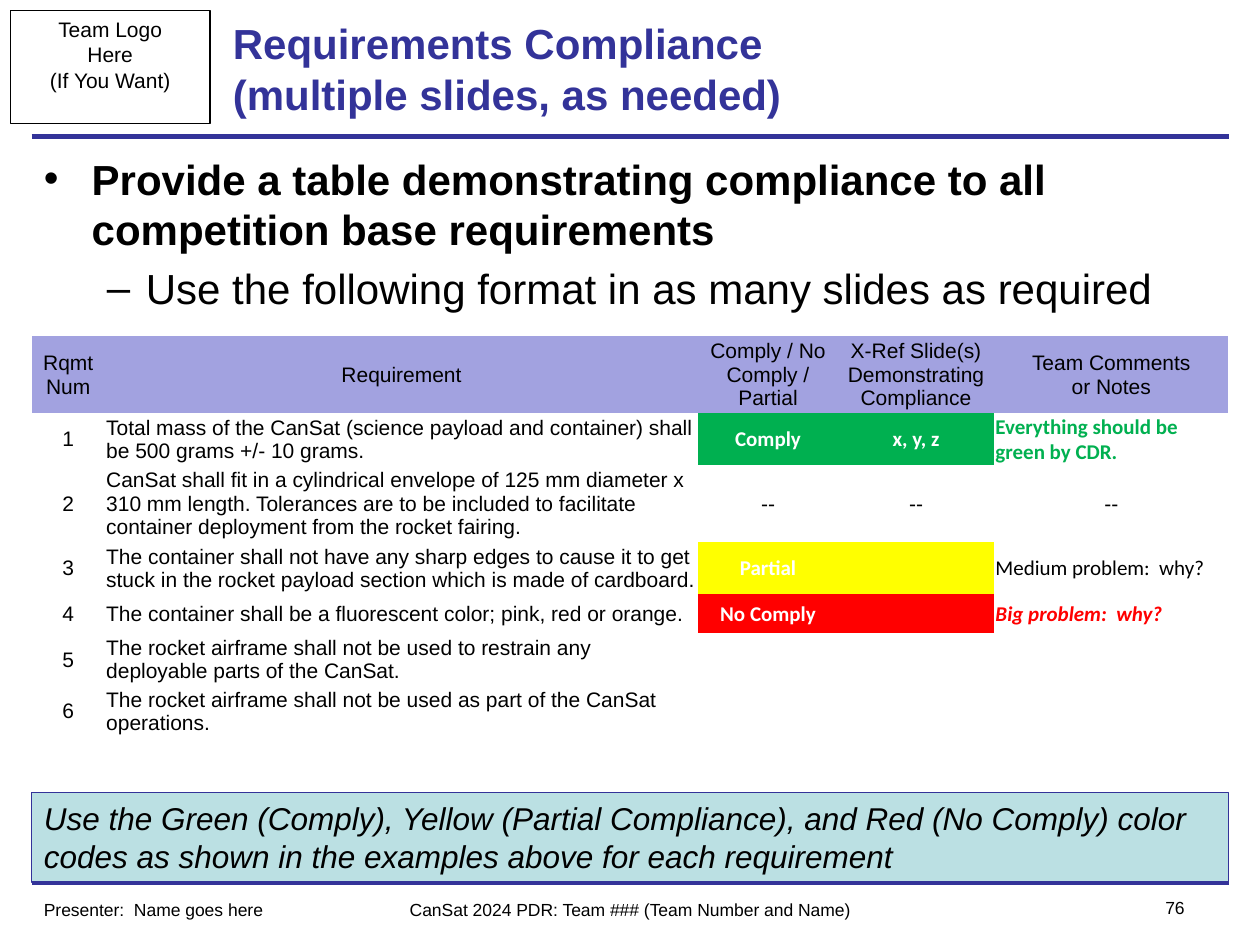
from dataclasses import dataclass

from lxml.etree import SubElement
from pptx import Presentation
from pptx.dml.color import RGBColor
from pptx.enum.shapes import MSO_CONNECTOR as Connector, MSO_SHAPE as Preset
from pptx.enum.text import MSO_ANCHOR as Anchor, PP_ALIGN as Align
from pptx.oxml.ns import qn
from pptx.util import Inches, Pt


@dataclass(frozen=True)
class Theme:
    navy: str = "333399"
    lavender: str = "A2A2E0"
    pale_blue: str = "BBE0E3"
    black: str = "000000"
    white: str = "FFFFFF"
    green: str = "00B050"
    yellow: str = "FFFF00"
    red: str = "FF0000"
    font: str = "Arial"
    status_font: str = "Calibri"
    heading: int = 24
    note: int = 18
    small: int = 12
    footer: int = 10


@dataclass(frozen=True)
class Box:
    """Left, top, width and height in grid units."""
    left: float
    top: float
    width: float
    height: float

    def place(self):
        return [grid(n) for n in (self.left, self.top, self.width, self.height)]


THEME = Theme()
NO_STYLE = "{2D5ABB26-0587-4C30-8999-92F81FD0307C}"


def grid(units):
    """The slide is a grid of 120 columns by 90 rows, 12 to the inch."""
    return Inches(units / 12)


def color(value):
    return RGBColor.from_string(value)


def add_run(paragraph, text, size, ink=THEME.black, font=THEME.font, bold=False, italic=False):
    run = paragraph.add_run()
    run.text = text
    run.font.size, run.font.name = Pt(size), font
    run.font.bold, run.font.italic = bold, italic
    run.font.color.rgb = color(ink)


def write_lines(frame, lines, align, size, **style):
    frame.word_wrap = True
    for index, line in enumerate(lines):
        paragraph = frame.add_paragraph() if index else frame.paragraphs[0]
        paragraph.alignment = align
        add_run(paragraph, line, size, **style)


def add_text(slide, box, lines, size, align=Align.LEFT, **style):
    frame = slide.shapes.add_textbox(*box.place()).text_frame
    write_lines(frame, lines, align, size, **style)


def add_panel(slide, box, line, fill=None):
    shape = slide.shapes.add_shape(Preset.RECTANGLE, *box.place())
    shape.shadow.inherit = False
    if fill:
        shape.fill.solid()
        shape.fill.fore_color.rgb = color(fill)
    else:
        shape.fill.background()
    shape.line.color.rgb, shape.line.width = color(line), Pt(0.75)
    shape.text_frame.vertical_anchor = Anchor.TOP
    return shape.text_frame


def add_rule(slide, left, top, width):
    x, y = grid(left), grid(top)
    rule = slide.shapes.add_connector(Connector.STRAIGHT, x, y, x + grid(width), y)
    rule.line.color.rgb, rule.line.width = color(THEME.navy), Pt(3)
    SubElement(rule._element.spPr, qn("a:effectLst"))


def set_bullet(paragraph, mark, indent, hanging):
    properties = paragraph._p.get_or_add_pPr()
    properties.set("marL", str(Inches(indent)))
    properties.set("indent", str(-Inches(hanging)))
    SubElement(properties, qn("a:buFont")).set("typeface", THEME.font)
    SubElement(properties, qn("a:buChar")).set("char", mark)


def build_header(slide, box):
    # Logo frame
    logo = add_panel(slide, Box(box.left + 1, box.top + 1, 19, 10.8), THEME.black)
    write_lines(logo, ["Team Logo", "Here", "(If You Want)"], Align.CENTER, THEME.small)
    # Title on two lines
    title = slide.shapes.add_textbox(*Box(box.left + 21, box.top + 1, 78, 11).place())
    frame = title.text_frame
    frame.word_wrap, frame.vertical_anchor = True, Anchor.MIDDLE
    paragraph = frame.paragraphs[0]
    add_run(paragraph, "Requirements Compliance", THEME.heading, THEME.navy, bold=True)
    paragraph.add_line_break()
    add_run(paragraph, "(multiple slides, as needed)", THEME.heading, THEME.navy, bold=True)
    add_rule(slide, box.left + 3, box.top + box.height, box.width - 6)


def build_bullets(slide, box):
    frame = slide.shapes.add_textbox(*box.place()).text_frame
    frame.word_wrap = True
    main, detail = frame.paragraphs[0], frame.add_paragraph()
    detail.level, detail.space_before = 1, Pt(4.8)
    set_bullet(main, "•", 0.38, 0.38)
    set_bullet(detail, "–", 0.81, 0.31)
    add_run(main, "Provide a table demonstrating compliance to all competition base requirements",
            THEME.heading, bold=True)
    add_run(detail, "Use the following format in as many slides as required", THEME.heading)


def fill_cell(cell, lines, align, fill=None, **style):
    cell.margin_left = cell.margin_right = cell.margin_top = Inches(0.01)
    cell.margin_bottom = 0
    cell.vertical_anchor = Anchor.MIDDLE
    if fill:
        cell.fill.solid()
        cell.fill.fore_color.rgb = color(fill)
    else:
        cell.fill.background()
    if lines:
        write_lines(cell.text_frame, lines, align, THEME.small, **style)


def build_table(slide, box):
    headers = ["Rqmt\nNum", "Requirement", "Comply / No Comply / Partial",
               "X-Ref Slide(s) Demonstrating Compliance", "Team Comments\nor Notes"]
    # Requirement, status, slide references, comment
    requirements = [
        ("Total mass of the CanSat (science payload and container) shall be 500 grams +/- 10 grams.",
         "Comply", "x, y, z", "Everything should be green by CDR."),
        ("CanSat shall fit in a cylindrical envelope of 125 mm diameter x 310 mm length. Tolerances "
         "are to be included to facilitate container deployment from the rocket fairing.",
         "--", "--", "--"),
        ("The container shall not have any sharp edges to cause it to get stuck in the rocket "
         "payload section which is made of cardboard.", "Partial", "", "Medium problem:  why?"),
        ("The container shall be a fluorescent color; pink, red or orange.",
         "No Comply", "", "Big problem:  why?"),
        ("The rocket airframe shall not be used to restrain any deployable parts of the CanSat.",
         "", "", ""),
        ("The rocket airframe shall not be used as part of the CanSat operations.", "", "", ""),
    ]
    # Fill and comment style of each status
    codes = {
        "Comply": (THEME.green, dict(ink=THEME.green, bold=True)),
        "Partial": (THEME.yellow, {}),
        "No Comply": (THEME.red, dict(ink=THEME.red, bold=True, italic=True)),
    }
    widths = [7, 56.5, 13.3, 14.9, 22.3]
    heights = [6.85, 4.95, 6.8, 5, 3.5, 4.65, 4.6]
    table = slide.shapes.add_table(len(heights), len(widths), *box.place()).table
    table.first_row = table.horz_banding = False
    table._tbl.tblPr.find(qn("a:tableStyleId")).text = NO_STYLE
    for column, width in zip(table.columns, widths):
        column.width = grid(width)
    for row, height in zip(table.rows, heights):
        row.height = grid(height)

    for column, header in enumerate(headers):
        fill_cell(table.cell(0, column), header.split("\n"), Align.CENTER, THEME.lavender)
    for number, (requirement, status, slides, comment) in enumerate(requirements, 1):
        fill, comment_style = codes.get(status, (None, {}))
        status_style, comment_align = {}, Align.CENTER
        if fill:
            status_style = dict(ink=THEME.white, font=THEME.status_font, bold=True)
            comment_style = dict(comment_style, font=THEME.status_font)
            comment_align = Align.LEFT
        cells = [(str(number), Align.CENTER, None, {}),
                 (requirement, Align.LEFT, None, {}),
                 (status, Align.CENTER, fill, status_style),
                 (slides, Align.CENTER, fill, status_style),
                 (comment, comment_align, None, comment_style)]
        for column, (text, align, shade, style) in enumerate(cells):
            fill_cell(table.cell(number, column), [text] if text else [], align, shade, **style)


def build_note(slide, box):
    frame = add_panel(slide, box, THEME.navy, THEME.pale_blue)
    write_lines(frame, ["Use the Green (Comply), Yellow (Partial Compliance), and Red (No Comply) "
                        "color codes as shown in the examples above for each requirement"],
                Align.LEFT, THEME.note, italic=True)


def build_footer(slide, box):
    add_rule(slide, box.left, box.top, box.width)
    top, height = box.top + 1, 3.25
    add_text(slide, Box(box.left, top, 30, height), ["Presenter:  Name goes here"], THEME.footer)
    add_text(slide, Box(box.left + 33, top, 48, height),
             ["CanSat 2024 PDR: Team ### (Team Number and Name)"], THEME.footer, Align.CENTER)
    add_text(slide, Box(box.left + 102, top - 0.15, 9, height), ["76"], THEME.footer, Align.RIGHT)


def main():
    presentation = Presentation()
    presentation.slide_width, presentation.slide_height = grid(120), grid(90)
    slide = presentation.slides.add_slide(presentation.slide_layouts[6])
    build_header(slide, Box(0, 0, 120, 13))
    build_bullets(slide, Box(3, 14, 114, 17))
    build_table(slide, Box(3, 32, 114, 36.35))
    build_footer(slide, Box(3, 84, 114, 6))
    build_note(slide, Box(3, 75.5, 114, 8.5))
    presentation.save("out.pptx")


if __name__ == "__main__":
    main()
